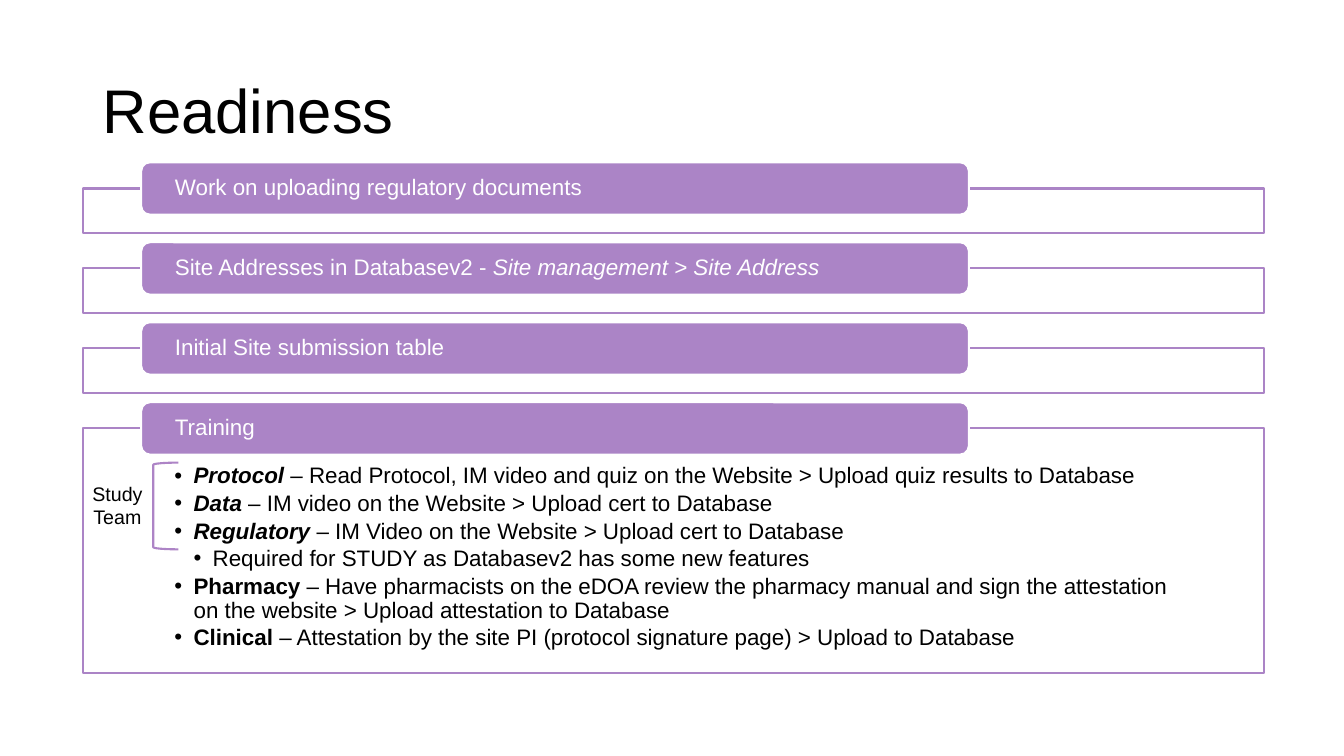
from lxml import etree
from pptx import Presentation
from pptx import util as u
from pptx.dml.color import RGBColor
from pptx.enum import shapes, text
from pptx.oxml.ns import qn

# Content: a run is (words, style), style holding b and/or i
TITLE = "Readiness"
TEAM = "Study Team"
STEPS = [
    [("Work on uploading regulatory documents", "")],
    [("Site Addresses in Databasev2 - ", ""), ("Site management > Site Address", "i")],
    [("Initial Site submission table", "")],
    [("Training", "")],
]
TRAINING = [  # (indent level, runs)
    (1, [("Protocol", "bi"),
         (" – Read Protocol, IM video and quiz on the Website > Upload quiz results to Database", "")]),
    (1, [("Data", "bi"), (" – IM video on the Website > Upload cert to Database", "")]),
    (1, [("Regulatory", "bi"), (" – IM Video on the Website > Upload cert to Database", "")]),
    (2, [("Required for STUDY as Databasev2 has some new features", "")]),
    (1, [("Pharmacy", "b"),
         (" – Have pharmacists on the eDOA review the pharmacy manual and sign the attestation"
          " on the website > Upload attestation to Database", "")]),
    (1, [("Clinical ", "b"),
         ("– Attestation by the site PI (protocol signature page) > Upload to Database", "")]),
]

# Format and grid, in inches
PURPLE, WHITE, BLACK = "AB84C6", "FFFFFF", "000000"
FONT = "Arial"
FRAME_LEFT, FRAME_WIDTH = 0.82, 11.72
FRAME_HEIGHT, TRAINING_HEIGHT = 0.44, 2.43
BAR_LEFT, BAR_WIDTH, BAR_HEIGHT = 1.4, 8.21, 0.52
FIRST_BAR, LAST_BAR = 1.61, 3.99
PITCH = (LAST_BAR - FIRST_BAR) / (len(STEPS) - 1)
INDENT = 0.19

deck = Presentation()
deck.slide_width, deck.slide_height = u.Inches(13.33), u.Inches(7.5)
slide = deck.slides.add_slide(deck.slide_layouts[6])


def colour(value):
    return RGBColor.from_string(value)


def add_outline(kind, box, line, fill=None, corner=None):
    shape = slide.shapes.add_shape(kind, *map(u.Inches, box))
    shape.shadow.inherit = False
    if fill:
        shape.fill.solid()
        shape.fill.fore_color.rgb = colour(fill)
    else:
        shape.fill.background()
    shape.line.color.rgb = colour(line)
    shape.line.width = u.Pt(1.5)
    if corner is not None:
        shape.adjustments[0] = corner
    return shape


def set_frame(shape, insets, anchor):
    frame = shape.text_frame
    left, top, right, bottom = map(u.Inches, insets)
    settings = dict(word_wrap=True, vertical_anchor=anchor, margin_left=left,
                    margin_top=top, margin_right=right, margin_bottom=bottom)
    for name, value in settings.items():
        setattr(frame, name, value)
    return frame


def write(paragraph, runs, size, ink, spacing=0.9, align=text.PP_ALIGN.LEFT):
    paragraph.alignment = align
    paragraph.line_spacing = spacing
    for words, style in runs:
        run = paragraph.add_run()
        run.text = words
        settings = dict(name=FONT, size=u.Pt(size), bold="b" in style, italic="i" in style)
        for name, value in settings.items():
            setattr(run.font, name, value)
        run.font.color.rgb = colour(ink)


def add_bullet(paragraph, level):
    props = paragraph._p.get_or_add_pPr()
    props.set("marL", str(u.Inches(INDENT * level)))
    props.set("indent", str(-u.Inches(INDENT)))
    etree.SubElement(props, qn("a:buFont")).set("typeface", FONT)
    etree.SubElement(props, qn("a:buChar")).set("char", "•")


def add_label(box, words, size, anchor, **format_values):
    label = slide.shapes.add_textbox(*map(u.Inches, box))
    frame = set_frame(label, (0.1, 0.05, 0.1, 0.05), anchor)
    write(frame.paragraphs[0], [(words, "")], size, BLACK, **format_values)


# Title
add_label((0.92, 0.4, 11.5, 1.45), TITLE, 44, text.MSO_ANCHOR.MIDDLE)

# Steps: an outlined frame with a bar across its top edge
for row, step in enumerate(STEPS):
    bar_top = FIRST_BAR + row * PITCH
    is_training = row == len(STEPS) - 1
    height = TRAINING_HEIGHT if is_training else FRAME_HEIGHT
    panel = add_outline(shapes.MSO_SHAPE.RECTANGLE,
                        (FRAME_LEFT, bar_top + BAR_HEIGHT / 2, FRAME_WIDTH, height),
                        PURPLE, WHITE)
    if is_training:
        body = set_frame(panel, (0.91, 0.36, 0.91, 0.12), text.MSO_ANCHOR.TOP)
        for number, (level, runs) in enumerate(TRAINING):
            item = body.add_paragraph() if number else body.paragraphs[0]
            write(item, runs, 16, BLACK)
            item.space_before = u.Pt(2.4 if number else 0)
            add_bullet(item, level)
    bar = add_outline(shapes.MSO_SHAPE.ROUNDED_RECTANGLE,
                      (BAR_LEFT, bar_top, BAR_WIDTH, BAR_HEIGHT), WHITE, PURPLE, 0.167)
    heading = set_frame(bar, (0.31, 0, 0.31, 0), text.MSO_ANCHOR.MIDDLE)
    write(heading.paragraphs[0], step, 16, WHITE)

# Study team bracket
add_outline(shapes.MSO_SHAPE.LEFT_BRACKET, (1.52, 4.59, 0.25, 0.86), "AD84C6", corner=0.083)
add_label((0.74, 4.73, 0.85, 0.57), TEAM, 14, text.MSO_ANCHOR.TOP,
          spacing=1.0, align=text.PP_ALIGN.CENTER)

deck.save("out.pptx")
